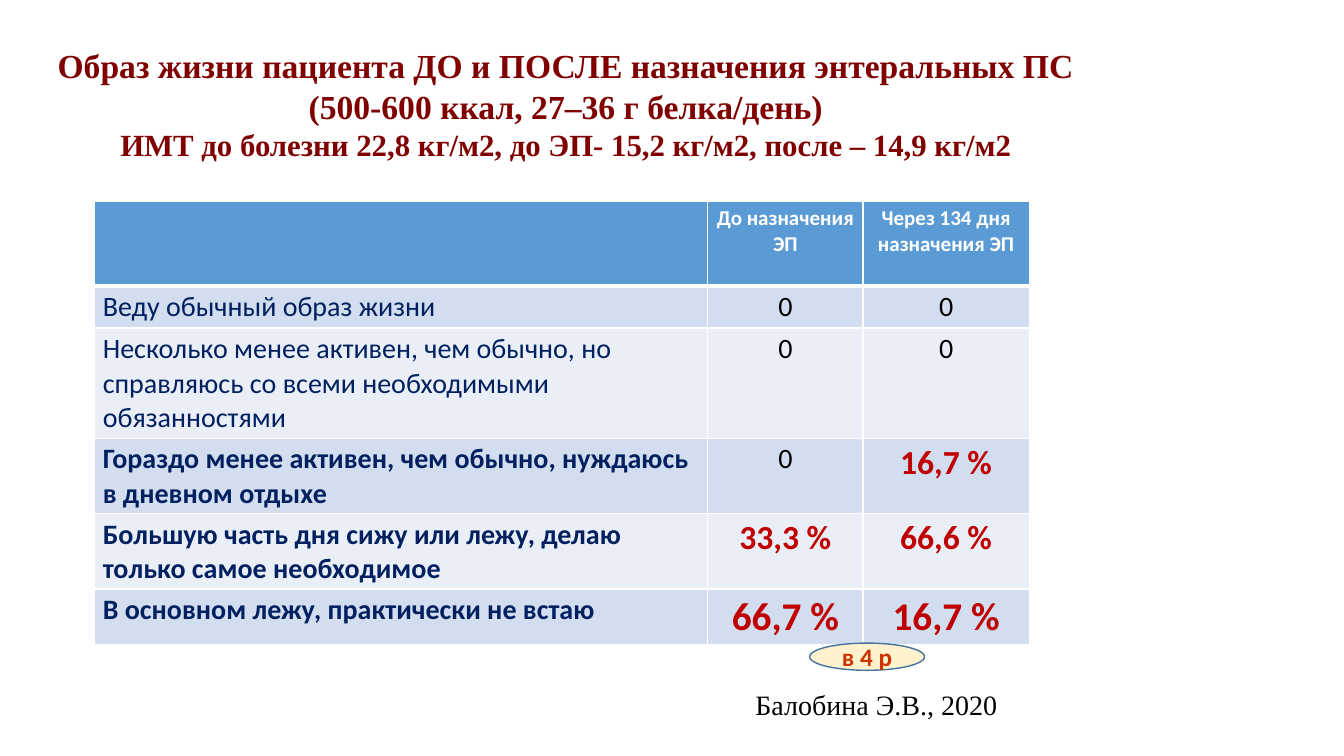
from dataclasses import dataclass

from lxml import etree
from pptx import Presentation
from pptx.dml.color import RGBColor
from pptx.enum.shapes import MSO_SHAPE
from pptx.enum.text import MSO_ANCHOR, PP_ALIGN
from pptx.oxml.ns import qn
from pptx.util import Inches, Pt

LEFT, CENTER, RIGHT = PP_ALIGN.LEFT, PP_ALIGN.CENTER, PP_ALIGN.RIGHT
MIDDLE = MSO_ANCHOR.MIDDLE
ELLIPSE = MSO_SHAPE.OVAL
BLANK_LAYOUT = 6
GRID = 100  # columns and rows across the slide


@dataclass(frozen=True)
class Theme:
    serif: str = "Times New Roman"
    sans: str = "Calibri"
    title: str = "800000"
    header: str = "5B9BD5"
    bands: tuple = ("D2DEEF", "EAEFF7")
    white: str = "FFFFFF"
    black: str = "000000"
    label: str = "002060"
    accent: str = "C00000"
    badge_fill: str = "FFF2CC"
    badge_line: str = "43739E"
    badge_text: str = "CC3300"
    title_size: int = 24
    subtitle_size: int = 22
    header_size: int = 15
    body_size: int = 20
    strong_size: int = 24
    peak_size: int = 28
    badge_size: int = 18


THEME = Theme()

TITLE = ("Образ жизни пациента ДО и ПОСЛЕ назначения энтеральных ПС\v"
         "(500-600 ккал, 27–36 г белка/день)")
SUBTITLE = "ИМТ до болезни 22,8 кг/м2, до ЭП- 15,2 кг/м2, после – 14,9 кг/м2"
HEADERS = ("", "До назначения ЭП", "Через 134 дня назначения ЭП")
# Label, its weight, the two values
ANSWERS = (
    ("Веду обычный образ жизни", False, "0", "0"),
    ("Несколько менее активен, чем обычно, но справляюсь со всеми "
     "необходимыми обязанностями", False, "0", "0"),
    ("Гораздо менее активен, чем обычно, нуждаюсь в дневном отдыхе",
     True, "0", "16,7 %"),
    ("Большую часть дня сижу или лежу, делаю только самое необходимое",
     True, "33,3 %", "66,6 %"),
    ("В основном лежу, практически не встаю", True, "66,7 %", "16,7 %"),
)
COLUMN_WEIGHTS = (6.08, 1.54, 1.65)
ROW_WEIGHTS = (0.83, 0.41, 1.08, 0.74, 0.74, 0.48)


def grid_box(deck, left, top, width, height):
    """Turn grid columns and rows into slide lengths."""
    column, row = deck.slide_width / GRID, deck.slide_height / GRID
    return (int(left * column), int(top * row),
            int(width * column), int(height * row))


def write(para, text, align, color, **font_values):
    para.text = text
    para.alignment = align
    for span in para.runs:
        for name, value in font_values.items():
            setattr(span.font, name, value)
        span.font.color.rgb = RGBColor.from_string(color)


def add_text(page, box):
    frame = page.shapes.add_textbox(*box).text_frame
    frame.word_wrap = True
    return frame


def add_title(page, box):
    frame = add_text(page, box)
    style = dict(align=CENTER, color=THEME.title, name=THEME.serif, bold=True)
    write(frame.paragraphs[0], TITLE, size=Pt(THEME.title_size), **style)
    write(frame.add_paragraph(), SUBTITLE, size=Pt(THEME.subtitle_size), **style)


def set_borders(cell, bottom_points):
    properties = cell._tc.get_or_add_tcPr()
    widths = {"a:lnL": 1, "a:lnR": 1, "a:lnT": 1, "a:lnB": bottom_points}
    for position, (tag, points) in enumerate(widths.items()):
        line = etree.Element(qn(tag), w=str(Pt(points)))
        fill = etree.SubElement(line, qn("a:solidFill"))
        etree.SubElement(fill, qn("a:srgbClr"), val=THEME.white)
        properties.insert(position, line)


def fill_cell(cell, text, fill, bottom_points=1, **style):
    cell.fill.solid()
    cell.fill.fore_color.rgb = RGBColor.from_string(fill)
    set_borders(cell, bottom_points)
    cell.margin_left = cell.margin_right = Inches(0.08)
    cell.margin_top = cell.margin_bottom = Inches(0.04)
    if text:
        write(cell.text_frame.paragraphs[0], text, name=THEME.sans, **style)


def value_style(value, is_last):
    if value == "0":
        return dict(color=THEME.black, size=Pt(THEME.body_size), bold=False)
    size = THEME.peak_size if is_last else THEME.strong_size
    return dict(color=THEME.accent, size=Pt(size), bold=True)


def add_answers_table(page, box):
    left, top, width, height = box
    table = page.shapes.add_table(
        len(ROW_WEIGHTS), len(COLUMN_WEIGHTS), left, top, width, height).table
    for column, weight in zip(table.columns, COLUMN_WEIGHTS):
        column.width = int(width * weight / sum(COLUMN_WEIGHTS))
    for row, weight in zip(table.rows, ROW_WEIGHTS):
        row.height = int(height * weight / sum(ROW_WEIGHTS))

    # Header row
    for index, text in enumerate(HEADERS):
        fill_cell(table.cell(0, index), text, THEME.header, 3, align=CENTER,
                  color=THEME.white, size=Pt(THEME.header_size), bold=True)

    # Answer rows
    for index, (label, bold, *values) in enumerate(ANSWERS, start=1):
        band = THEME.bands[(index - 1) % 2]
        fill_cell(table.cell(index, 0), label, band, align=LEFT,
                  color=THEME.label, size=Pt(THEME.body_size), bold=bold)
        for column, value in enumerate(values, start=1):
            fill_cell(table.cell(index, column), value, band, align=CENTER,
                      **value_style(value, index == len(ANSWERS)))


def add_author(page, box):
    write(add_text(page, box).paragraphs[0], "Балобина Э.В., 2020", RIGHT,
          THEME.black, name=THEME.serif, size=Pt(THEME.body_size))


def add_badge(page, box):
    badge = page.shapes.add_shape(ELLIPSE, *box)
    badge.shadow.inherit = False
    badge.fill.solid()
    badge.fill.fore_color.rgb = RGBColor.from_string(THEME.badge_fill)
    badge.line.color.rgb = RGBColor.from_string(THEME.badge_line)
    badge.line.width = Pt(1)
    frame = badge.text_frame
    frame_values = dict(word_wrap=True, vertical_anchor=MIDDLE, margin_left=0,
                        margin_right=0, margin_top=0, margin_bottom=0)
    for name, value in frame_values.items():
        setattr(frame, name, value)
    write(frame.paragraphs[0], "в 4 р", CENTER, THEME.badge_text,
          name=THEME.sans, size=Pt(THEME.badge_size), bold=True)


def main():
    deck = Presentation()
    deck.slide_width, deck.slide_height = Inches(13.33), Inches(7.5)
    page = deck.slides.add_slide(deck.slide_layouts[BLANK_LAYOUT])
    add_title(page, grid_box(deck, 3, 5.33, 78.17, 17.07))
    add_answers_table(page, grid_box(deck, 7.05, 26.67, 69.54, 57.73))
    add_author(page, grid_box(deck, 54.39, 90.27, 20.56, 5.87))
    add_badge(page, grid_box(deck, 60.24, 85.07, 8.55, 3.6))
    deck.save("out.pptx")


if __name__ == "__main__":
    main()
